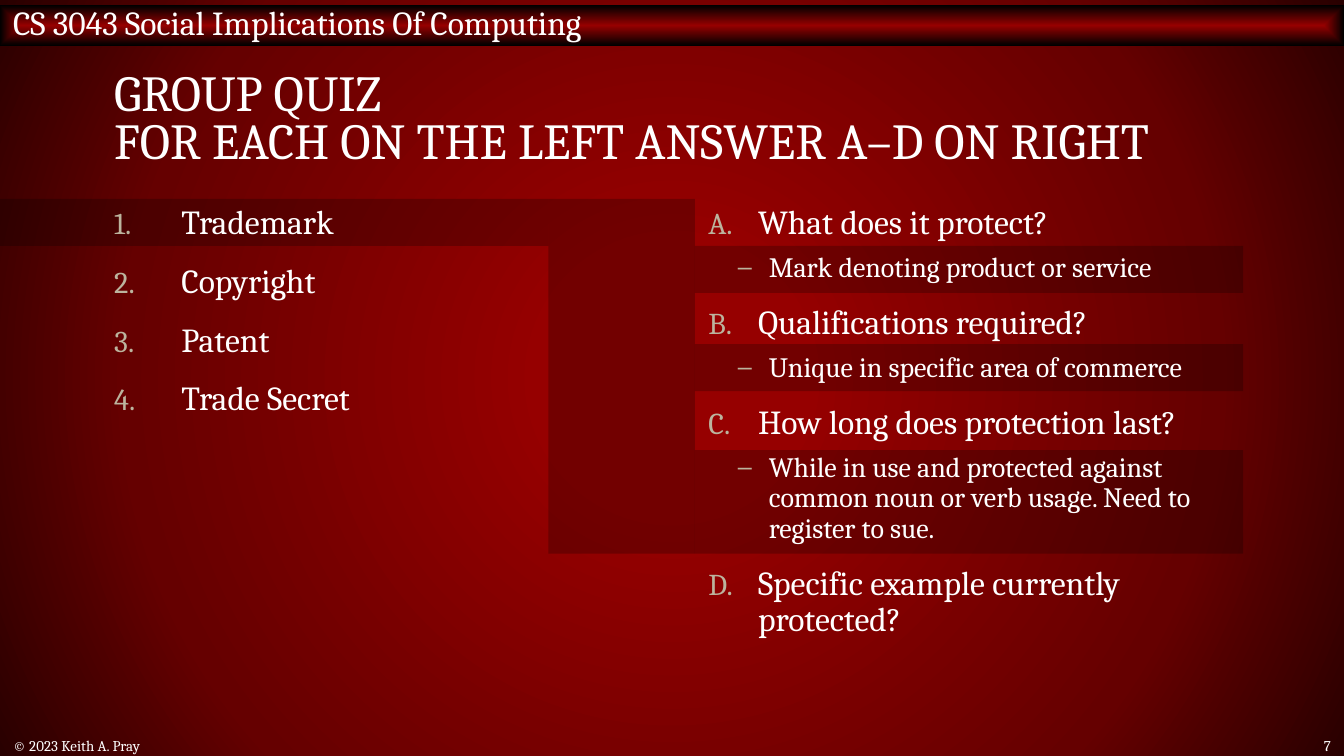
import pptx
import pptx.util
from lxml import etree
from pptx.dml.color import RGBColor
from pptx.enum.shapes import MSO_SHAPE
from pptx.enum.text import MSO_ANCHOR, MSO_AUTO_SIZE, PP_ALIGN
from pptx.oxml.ns import qn

HEADER = "CS 3043 Social Implications Of Computing"
TITLE = ["GROUP QUIZ", "FOR EACH ON THE LEFT ANSWER A–D ON RIGHT"]
TERMS = ["Trademark", "Copyright", "Patent", "Trade Secret"]
QUESTIONS = [
    ("What does it protect?", "Mark denoting product or service"),
    ("Qualifications required?", "Unique in specific area of commerce"),
    ("How long does protection last?",
     "While in use and protected against common noun or verb usage. Need to register to sue."),
    ("Specific example currently protected?", None),
]
COPYRIGHT = "© 2023 Keith A. Pray"
PAGE = "7"

FONT = "Cambria"
COLORS = {"text": "FFFFFF", "bullet": "BCB49E", "shade": "000000",
          "bright": "960000", "mid": "650000", "dark": "290000"}
SHADE_ALPHA = 24

W = 10
H = W * 9 / 16
MARGIN, COL_W = 0.75, 4.08
LEFT_X, RIGHT_X = MARGIN, W - MARGIN - COL_W
BODY_Y, BODY_H = 1.48, 3.67
ROW_H, FOOT_H = 0.35, 0.16
LINK_X = COL_W
ANSWERS = [(1.83, ROW_H), (2.56, ROW_H), (3.35, 0.77)]

LEVELS = {
    "term": (0, 18, 12, 0.5, -0.5, "buAutoNum", {"type": "arabicPeriod"}),
    "question": (0, 18, 12, 0.37, -0.37, "buAutoNum", {"type": "alphaUcPeriod"}),
    "answer": (1, 15, 6, 0.45, -0.23, "buChar", {"char": "–"}),
}


def rgb(name):
    return RGBColor.from_string(COLORS[name])


def place(shape, x, y, w, h):
    shape.left, shape.top, shape.width, shape.height = map(pptx.util.Inches, (x, y, w, h))


def add_run(p, text, size):
    r = p.add_run()
    r.text = text
    r.font.name, r.font.size = FONT, pptx.util.Pt(size)
    r.font.color.rgb = rgb("text")


def set_gradient(fill, parent, stops, path):
    fill.solid()
    grad = etree.Element(qn("a:gradFill"), rotWithShape="1")
    stop_list = etree.SubElement(grad, qn("a:gsLst"))
    for pos, name in stops:
        gs = etree.SubElement(stop_list, qn("a:gs"), pos=str(pos * 1000))
        etree.SubElement(gs, qn("a:srgbClr"), val=COLORS[name])
    route = etree.SubElement(grad, qn("a:path"), path=path)
    etree.SubElement(route, qn("a:fillToRect"), l="50000", t="50000", r="50000", b="50000")
    parent.replace(parent.find(qn("a:solidFill")), grad)


def add_rect(s, x, y, w, h):
    sp = s.shapes.add_shape(MSO_SHAPE.RECTANGLE, *map(pptx.util.Inches, (x, y, w, h)))
    sp.shadow.inherit = False
    sp.line.fill.background()
    return sp


def add_shade(s, x, y, w, h):
    sp = add_rect(s, x, y, w, h)
    sp.fill.solid()
    sp.fill.fore_color.rgb = rgb("shade")
    color = sp.element.spPr.find(".//" + qn("a:srgbClr"))
    etree.SubElement(color, qn("a:alpha"), val=str(SHADE_ALPHA * 1000))


def add_list(ph, x, items):
    place(ph, x, BODY_Y, COL_W, BODY_H)
    tf = ph.text_frame
    tf.auto_size = MSO_AUTO_SIZE.NONE
    for i, (kind, text) in enumerate(items):
        level, size, before, margin, indent, bullet, attrs = LEVELS[kind]
        p = tf.add_paragraph() if i else tf.paragraphs[0]
        p.level, p.line_spacing = level, 0.9
        p.space_before = pptx.util.Pt(before if i else 0)
        p.space_after = pptx.util.Pt(0)
        pPr = p._p.get_or_add_pPr()
        pPr.set("marL", str(pptx.util.Inches(margin)))
        pPr.set("indent", str(pptx.util.Inches(indent)))
        color = etree.SubElement(pPr, qn("a:buClr"))
        etree.SubElement(color, qn("a:srgbClr"), val=COLORS["bullet"])
        etree.SubElement(pPr, qn("a:buSzPct"), val="90000")
        if bullet == "buAutoNum":
            etree.SubElement(pPr, qn("a:buFont"), typeface=FONT)
        etree.SubElement(pPr, qn("a:" + bullet), attrs)
        add_run(p, text, size)


def add_footer(s, x, w, text, align):
    box = s.shapes.add_textbox(*map(pptx.util.Inches, (x, H - FOOT_H, w, FOOT_H)))
    tf = box.text_frame
    tf.word_wrap, tf.vertical_anchor = True, MSO_ANCHOR.MIDDLE
    p = tf.paragraphs[0]
    p.alignment = align
    add_run(p, text, 8)


def main():
    prs = pptx.Presentation()
    prs.slide_width, prs.slide_height = pptx.util.Inches(W), pptx.util.Inches(H)
    s = prs.slides.add_slide(prs.slide_layouts.get_by_name("Two Content"))
    title, left, right = s.placeholders

    fill = s.background.fill
    fill.solid()
    set_gradient(fill, s.element.find(".//" + qn("p:bgPr")),
                 [(17, "bright"), (71, "mid"), (100, "dark")], "circle")

    bar = add_rect(s, 0, 0.04, W, 0.3)
    set_gradient(bar.fill, bar.element.spPr, [(0, "bright"), (100, "shade")], "shape")
    tf = bar.text_frame
    tf.vertical_anchor = MSO_ANCHOR.MIDDLE
    tf.margin_top, tf.margin_bottom = 0, pptx.util.Inches(0.05)
    tf.paragraphs[0].alignment = PP_ALIGN.LEFT
    add_run(tf.paragraphs[0], HEADER, 18)

    add_shade(s, 0, BODY_Y, LINK_X, ROW_H)
    for y, h in ANSWERS:
        add_shade(s, RIGHT_X, y, COL_W, h)
    add_shade(s, LINK_X, BODY_Y, RIGHT_X - LINK_X, sum(ANSWERS[-1]) - BODY_Y)

    place(title, MARGIN, 0.4, W - 2 * MARGIN, 1)
    tf = title.text_frame
    tf.auto_size, tf.vertical_anchor = MSO_AUTO_SIZE.NONE, MSO_ANCHOR.MIDDLE
    p = tf.paragraphs[0]
    p.alignment, p.line_spacing = PP_ALIGN.LEFT, 0.8
    for i, line in enumerate(TITLE):
        if i:
            p.add_line_break()
        add_run(p, line, 27)

    add_list(left, LEFT_X, [("term", term) for term in TERMS])
    add_list(right, RIGHT_X, [(kind, text) for pair in QUESTIONS
                              for kind, text in zip(("question", "answer"), pair) if text])

    add_footer(s, 0, 6.08, COPYRIGHT, PP_ALIGN.LEFT)
    add_footer(s, W - 0.68, 0.68, PAGE, PP_ALIGN.RIGHT)
    for sp in (title, left, right):
        s.shapes.element.append(sp.element)
    prs.save("out.pptx")


if __name__ == "__main__":
    main()
